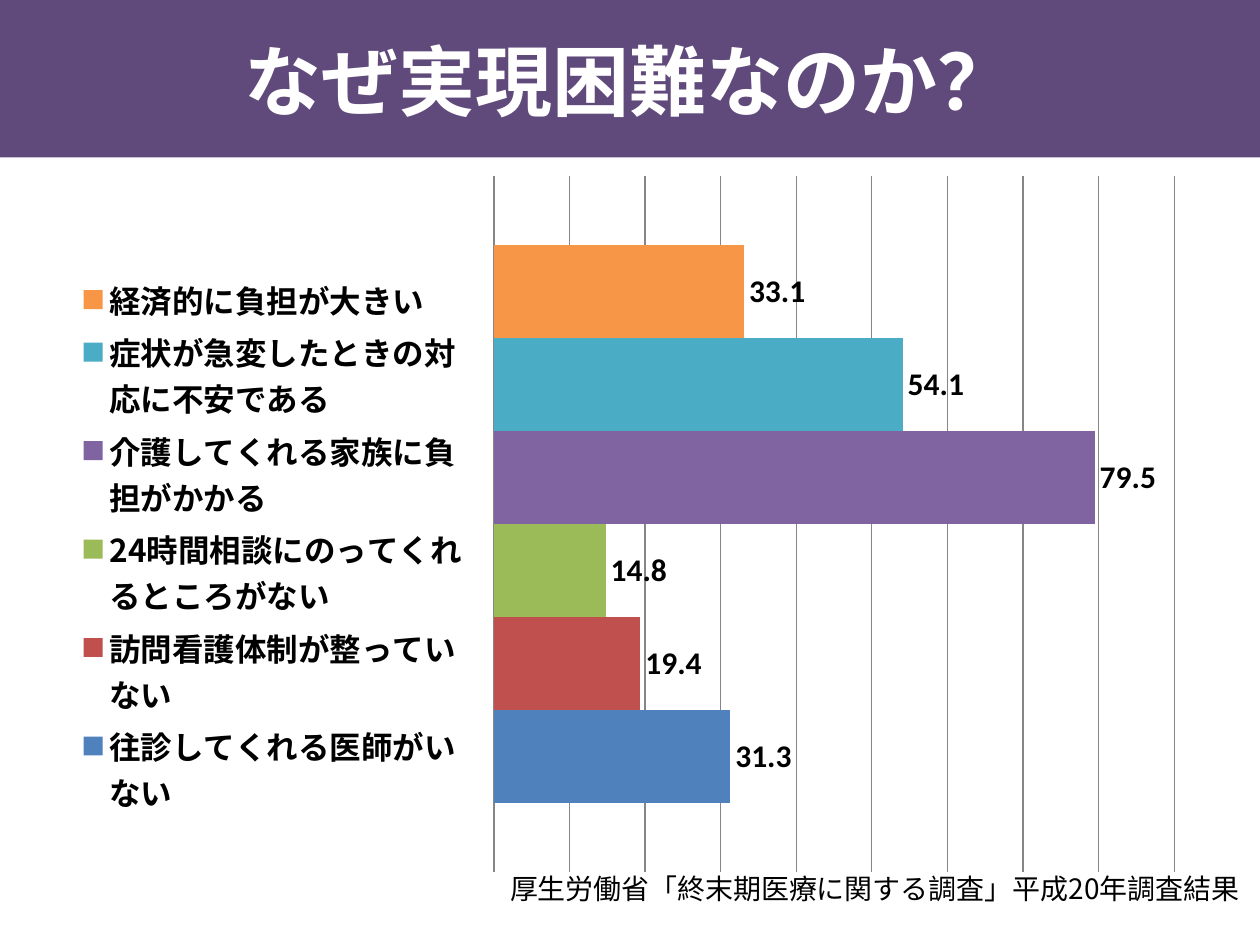
from lxml import etree
from pptx import Presentation
from pptx.chart.data import CategoryChartData
from pptx.dml.color import RGBColor
from pptx.enum import chart as ch, shapes, text
from pptx.oxml.ns import qn
from pptx.util import Inches, Pt

# Content
TITLE = "なぜ実現困難なのか？"
SOURCE = "厚生労働省「終末期医療に関する調査」平成20年調査結果"
BARS = [
    ("往診してくれる医師がいない", 31.3, RGBColor(0x4F, 0x81, 0xBD)),
    ("訪問看護体制が整っていない", 19.4, RGBColor(0xC0, 0x50, 0x4D)),
    ("24時間相談にのってくれるところがない", 14.8, RGBColor(0x9B, 0xBB, 0x59)),
    ("介護してくれる家族に負担がかかる", 79.5, RGBColor(0x80, 0x64, 0xA2)),
    ("症状が急変したときの対応に不安である", 54.1, RGBColor(0x4B, 0xAC, 0xC6)),
    ("経済的に負担が大きい", 33.1, RGBColor(0xF7, 0x96, 0x46)),
]
PURPLE = RGBColor(0x60, 0x4A, 0x7B)
WHITE = RGBColor(0xFF, 0xFF, 0xFF)
BLACK = RGBColor(0, 0, 0)
GRAY = RGBColor(0x86, 0x86, 0x86)
LATIN, KANJI = "Calibri", "Noto Sans CJK JP"


def style(font, size, color, bold, name):
    font.size, font.bold, font.name = Pt(size), bold, name
    font.color.rgb = color
    etree.SubElement(font._rPr, qn("a:ea")).set("typeface", KANJI)


def write(slide, box, words, size, color, bold, align, anchor):
    frame = slide.shapes.add_textbox(*map(Inches, box)).text_frame
    frame.word_wrap = True
    frame.vertical_anchor = anchor
    frame.text = words
    line = frame.paragraphs[0]
    line.alignment = align
    style(line.runs[0].font, size, color, bold, KANJI)


def place(parent, index, box, inner=False):
    """Fix a chart part at fractions (x, y, w, h) of the chart area."""
    for old in parent.findall(qn("c:layout")):
        parent.remove(old)
    layout = etree.Element(qn("c:layout"))
    manual = etree.SubElement(layout, qn("c:manualLayout"))
    rules = [("layoutTarget", "inner")] if inner else []
    rules += [("xMode", "edge"), ("yMode", "edge"), *zip("xywh", box)]
    for tag, value in rules:
        etree.SubElement(manual, qn("c:" + tag)).set("val", str(value))
    parent.insert(index, layout)


deck = Presentation()
deck.slide_width, deck.slide_height = Inches(10), Inches(7.5)
slide = deck.slides.add_slide(deck.slide_layouts[6])

# Title band
band = slide.shapes.add_shape(shapes.MSO_SHAPE.RECTANGLE, 0, 0,
                              Inches(10), Inches(1.25))
band.shadow.inherit = False
band.fill.solid()
band.fill.fore_color.rgb = PURPLE
band.line.fill.background()
write(slide, (0.5, 0.16, 9, 0.95), TITLE, 44, WHITE, True,
      text.PP_ALIGN.CENTER, text.MSO_ANCHOR.MIDDLE)

# Bar chart, one series per reason
data = CategoryChartData()
data.categories = ["1"]
for name, value, _ in BARS:
    data.add_series(name, [value])
chart = slide.shapes.add_chart(
    ch.XL_CHART_TYPE.BAR_CLUSTERED, Inches(0.5), Inches(1.28),
    Inches(9), Inches(5.76), data).chart
chart.has_title = False
style(chart.font, 18, BLACK, True, LATIN)
plot = chart.plots[0]
plot.gap_width, plot.overlap = 150, 0
plot.vary_by_categories = False
for series, (_, _, color) in zip(plot.series, BARS):
    series.format.fill.solid()
    series.format.fill.fore_color.rgb = color
    labels = series.data_labels
    labels.show_value = True
    labels.position = ch.XL_LABEL_POSITION.OUTSIDE_END

# Axes and grid
chart.category_axis.visible = False
axis = chart.value_axis
axis.visible = False
axis.minimum_scale, axis.maximum_scale, axis.major_unit = 0, 90, 10
axis.has_major_gridlines = True
axis.major_gridlines.format.line.color.rgb = GRAY
axis.major_gridlines.format.line.width = Pt(0.75)

# Legend and plot places
chart.has_legend = True
legend = chart.legend
legend.position = ch.XL_LEGEND_POSITION.LEFT
legend.include_in_layout = False
style(legend.font, 18, BLACK, True, KANJI)
place(legend._element, 1, (0.01, 0.15, 0.35, 0.76))
place(chart._chartSpace.chart.plotArea, 0, (0.38, 0.02, 0.6, 0.96), True)

# Source note
write(slide, (3.95, 6.87, 6.05, 0.37), SOURCE, 16, BLACK, False,
      text.PP_ALIGN.LEFT, text.MSO_ANCHOR.TOP)

deck.save("out.pptx")
